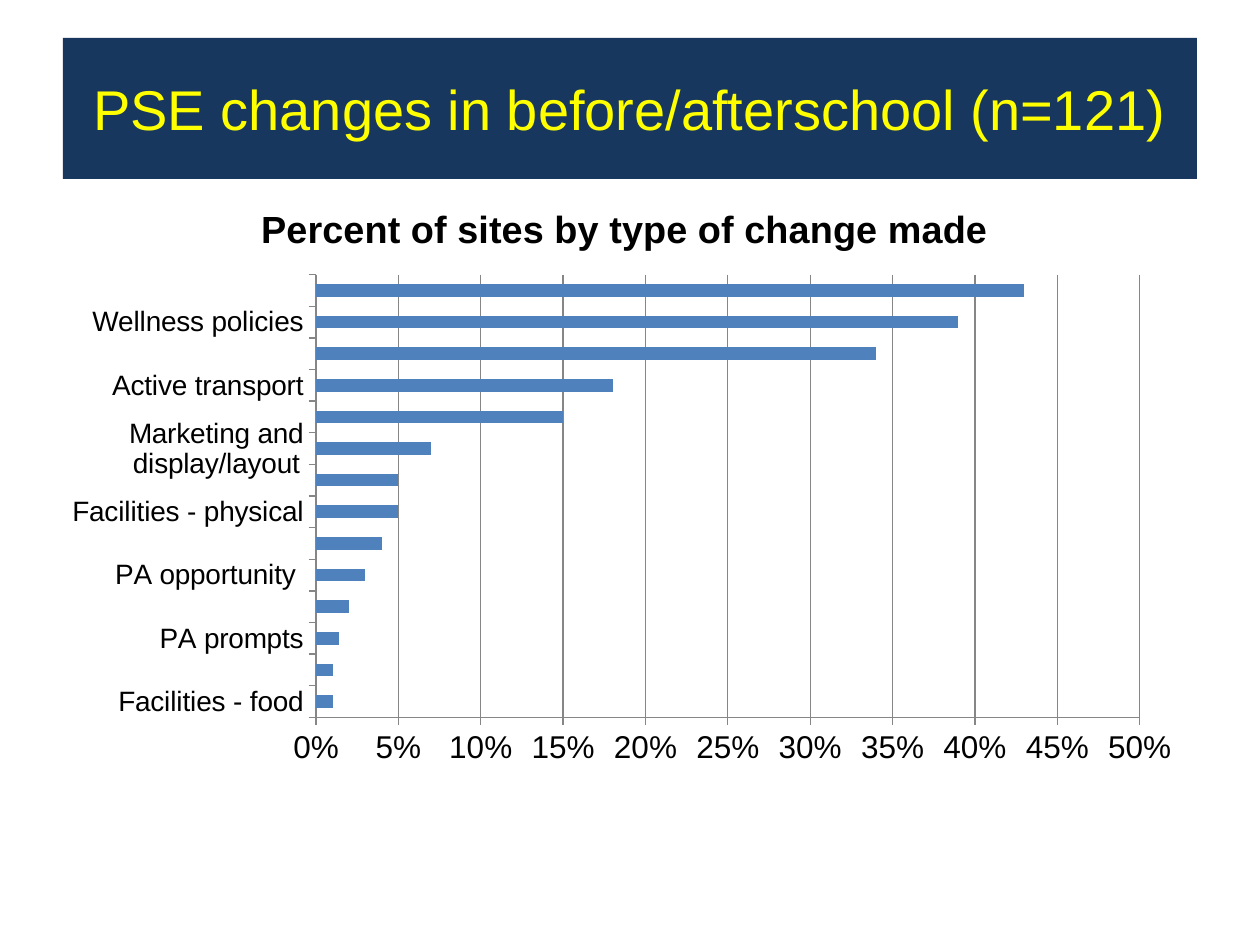
from lxml import etree
from pptx import Presentation
from pptx.chart.data import CategoryChartData
from pptx.dml.color import RGBColor
from pptx.enum import chart as ch, shapes, text
from pptx.oxml import ns
from pptx.util import Pt

HEAD = "PSE changes in before/afterschool (n=121)"
TITLE = "Percent of sites by type of change made"
SITES = [
    ("Facilities - food", 0.01),
    ("New venues/access", 0.01),
    ("PA prompts", 0.014),
    ("PA quality", 0.02),
    ("PA opportunity ", 0.03),
    ("Water", 0.04),
    ("Facilities - physical", 0.05),
    ("Student/community involvement", 0.05),
    ("Marketing and display/layout", 0.07),
    ("Food procurement/distribution", 0.15),
    ("Active transport", 0.18),
    ("Gardens", 0.34),
    ("Wellness policies", 0.39),
    ("Quantity / quality of foods offered", 0.43),
]
COLORS = {"navy": "17375E", "yellow": "FFFF00", "bar": "4F81BD",
          "black": "000000", "grid": "868686"}
PLOT = {"x": 0.23, "y": 0.16, "w": 0.72, "h": 0.74}


def rgb(name):
    return RGBColor.from_string(COLORS[name])


def style(font, size, color, bold=False):
    vals = {"name": "Arial", "size": Pt(size), "bold": bold}
    for key, val in vals.items():
        setattr(font, key, val)
    font.color.rgb = rgb(color)


def rule(line):
    line.color.rgb = rgb("grid")
    line.width = Pt(0.75)


def place(plot):
    area = plot.find(ns.qn("c:layout"))
    if area is None:
        area = etree.Element(ns.qn("c:layout"))
        plot.insert(0, area)
    box = etree.SubElement(area, ns.qn("c:manualLayout"))
    parts = [("layoutTarget", "inner"), ("xMode", "edge"), ("yMode", "edge")]
    for tag, val in parts + list(PLOT.items()):
        etree.SubElement(box, ns.qn("c:" + tag)).set("val", str(val))


def banner(slide):
    box = slide.shapes.add_shape(shapes.MSO_SHAPE.RECTANGLE,
                                 Pt(36), Pt(21.6), Pt(648), Pt(80.64))
    box.shadow.inherit = False
    box.fill.solid()
    box.fill.fore_color.rgb = rgb("navy")
    box.line.fill.background()
    frame = box.text_frame
    for side in ("left", "right", "top", "bottom"):
        setattr(frame, "margin_" + side, Pt(7.2))
    frame.word_wrap = True
    frame.vertical_anchor = text.MSO_ANCHOR.MIDDLE
    para = frame.paragraphs[0]
    para.alignment = text.PP_ALIGN.CENTER
    run = para.add_run()
    run.text = HEAD
    style(run.font, 32, "yellow")


def bars(slide):
    data = CategoryChartData(number_format="0%")
    data.categories = [name for name, val in SITES]
    data.add_series(TITLE, [val for name, val in SITES])
    chart = slide.shapes.add_chart(ch.XL_CHART_TYPE.BAR_CLUSTERED, Pt(30.24),
                                   Pt(102.24), Pt(653.76), Pt(342), data).chart
    style(chart.font, 18, "black")
    chart.has_legend = False
    chart.has_title = True
    frame = chart.chart_title.text_frame
    frame.text = TITLE
    style(frame.paragraphs[0].runs[0].font, 21.6, "black", True)
    chart.chart_title.include_in_layout = False

    plot = chart.plots[0]
    plot.gap_width = 150
    plot.vary_by_categories = False
    fill = plot.series[0].format.fill
    fill.solid()
    fill.fore_color.rgb = rgb("bar")

    for axis, size in ((chart.category_axis, 16), (chart.value_axis, 18)):
        style(axis.tick_labels.font, size, "black")
        axis.major_tick_mark = ch.XL_TICK_MARK.OUTSIDE
        axis.minor_tick_mark = ch.XL_TICK_MARK.NONE
        rule(axis.format.line)
    axis = chart.value_axis
    vals = {"minimum_scale": 0, "maximum_scale": 0.5, "major_unit": 0.05,
            "has_major_gridlines": True}
    for key, val in vals.items():
        setattr(axis, key, val)
    rule(axis.major_gridlines.format.line)
    axis.tick_labels.number_format = "0%"
    axis.tick_labels.number_format_is_linked = False
    place(chart.element.find(".//" + ns.qn("c:plotArea")))


def main():
    deck = Presentation()
    deck.slide_width, deck.slide_height = Pt(720), Pt(540)
    slide = deck.slides.add_slide(deck.slide_layouts[6])
    banner(slide)
    bars(slide)
    deck.save("out.pptx")


if __name__ == "__main__":
    main()
